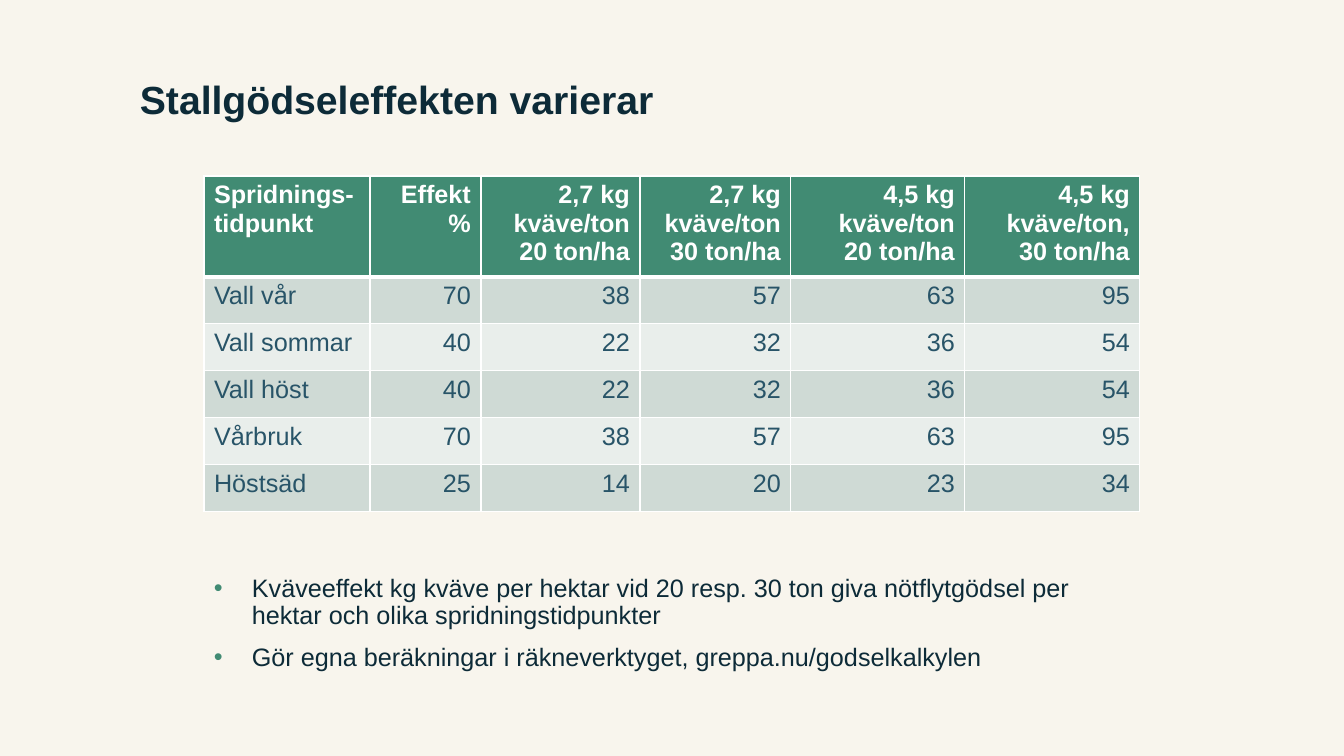
from lxml import etree
from pptx import Presentation
from pptx.dml.color import RGBColor
from pptx.enum.text import MSO_ANCHOR, PP_ALIGN
from pptx.oxml.ns import qn
from pptx.util import Pt

LEFT, RIGHT = PP_ALIGN.LEFT, PP_ALIGN.RIGHT
TOP, BOTTOM = MSO_ANCHOR.TOP, MSO_ANCHOR.BOTTOM
SCALE = 914400 / 100.8  # EMU per px
COLORS = {
    "paper": "F8F5ED", "ink": "0D2B38", "green": "418B73", "white": "FFFFFF",
    "cell": "285468", "dark": "CFDAD5", "light": "E9EEEB",
}

COLS = [166, 111, 159, 151, 174, 175]
HEAD = [
    "Spridnings-tidpunkt", "Effekt %",
    "2,7 kg kväve/ton\n20 ton/ha", "2,7 kg kväve/ton\n30 ton/ha",
    "4,5 kg kväve/ton\n20 ton/ha", "4,5 kg kväve/ton,\n30 ton/ha",
]
ROWS = [
    ["Vall vår", 70, 38, 57, 63, 95],
    ["Vall sommar", 40, 22, 32, 36, 54],
    ["Vall höst", 40, 22, 32, 36, 54],
    ["Vårbruk", 70, 38, 57, 63, 95],
    ["Höstsäd", 25, 14, 20, 23, 34],
]
NOTES = [
    "Kväveeffekt kg kväve per hektar vid 20 resp. 30 ton giva nötflytgödsel "
    "per hektar och olika spridningstidpunkter",
    "Gör egna beräkningar i räkneverktyget, greppa.nu/godselkalkylen",
]


def px(num):
    return round(num * SCALE)


def rgb(name):
    return RGBColor.from_string(COLORS[name])


class Deck:
    def __init__(self, wide, high):
        self.prs = Presentation()
        self.prs.slide_width, self.prs.slide_height = px(wide), px(high)
        self.slide = self.prs.slides.add_slide(self.prs.slide_layouts[6])
        fill = self.slide.background.fill
        fill.solid()
        fill.fore_color.rgb = rgb("paper")

    def style(self, para, color, size=18, bold=False, **form):
        for key, val in form.items():
            setattr(para, key, val)
        font = {"name": "Arial", "size": Pt(size), "bold": bold}
        for key, val in font.items():
            setattr(para.font, key, val)
        para.font.color.rgb = rgb(color)

    def bullet(self, para, indent):
        props = para._p.get_or_add_pPr()
        props.set("marL", str(px(indent)))
        props.set("indent", str(-px(indent)))
        tint = etree.SubElement(props, qn("a:buClr"))
        etree.SubElement(tint, qn("a:srgbClr"), val=COLORS["green"])
        etree.SubElement(props, qn("a:buFont"), typeface="Arial")
        etree.SubElement(props, qn("a:buChar"), char="•")

    def text(self, box, lines, anchor=TOP, indent=0, **form):
        frame = self.slide.shapes.add_textbox(*map(px, box)).text_frame
        frame.word_wrap = True
        frame.vertical_anchor = anchor
        frame.text = "\n".join(lines)
        for num, para in enumerate(frame.paragraphs):
            if indent:
                self.bullet(para, indent)
            gap = Pt(10 if num else 0)
            self.style(para, line_spacing=0.9, space_before=gap, **form)

    def border(self, cell, **widths):
        props = cell._tc.get_or_add_tcPr()
        for side in "LRTB":
            width = Pt(widths.get(side, 1))
            line = etree.SubElement(props, qn("a:ln" + side), w=str(width))
            fill = etree.SubElement(line, qn("a:solidFill"))
            etree.SubElement(fill, qn("a:srgbClr"), val=COLORS["white"])

    def table(self, left, top, cols, rows, high, head):
        box = left, top, sum(cols), head + high * (len(rows) - 1)
        shape = self.slide.shapes.add_table(len(rows), len(cols), *map(px, box))
        grid = shape.table
        for col, wide in zip(grid.columns, cols):
            col.width = px(wide)
        for r, row in enumerate(rows):
            grid.rows[r].height = px(high if r else head)
            back = ("dark" if r % 2 else "light") if r else "green"
            # The rule under the header is thicker than the rest
            rule = {0: {"B": 3}, 1: {"T": 3}}.get(r, {})
            for c, value in enumerate(row):
                cell = grid.cell(r, c)
                self.border(cell, **rule)
                cell.fill.solid()
                cell.fill.fore_color.rgb = rgb(back)
                cell.text = str(value)
                for para in cell.text_frame.paragraphs:
                    self.style(para, "cell" if r else "white", bold=not r,
                               alignment=RIGHT if c else LEFT)


def main():
    deck = Deck(1344, 756)
    # Title
    deck.text((130, 51, 913, 77), ["Stallgödseleffekten varierar"],
              anchor=BOTTOM, color="ink", size=28, bold=True)
    # Nitrogen effect by spreading time
    deck.table(204, 176, COLS, [HEAD] + ROWS, high=47, head=95)
    # Notes
    deck.text((204, 571, 913, 123), NOTES, indent=38, color="ink")
    deck.prs.save("out.pptx")


if __name__ == "__main__":
    main()
